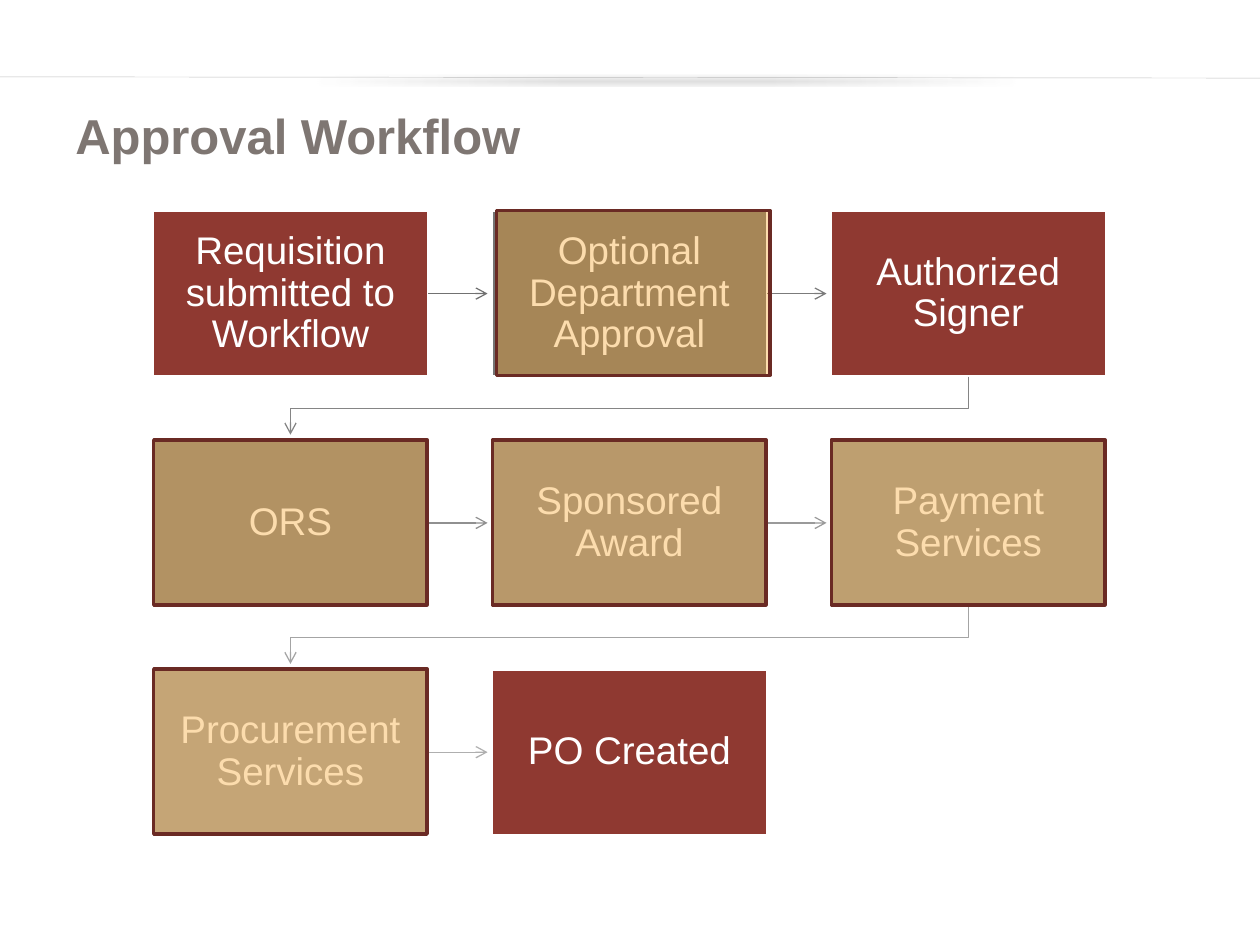
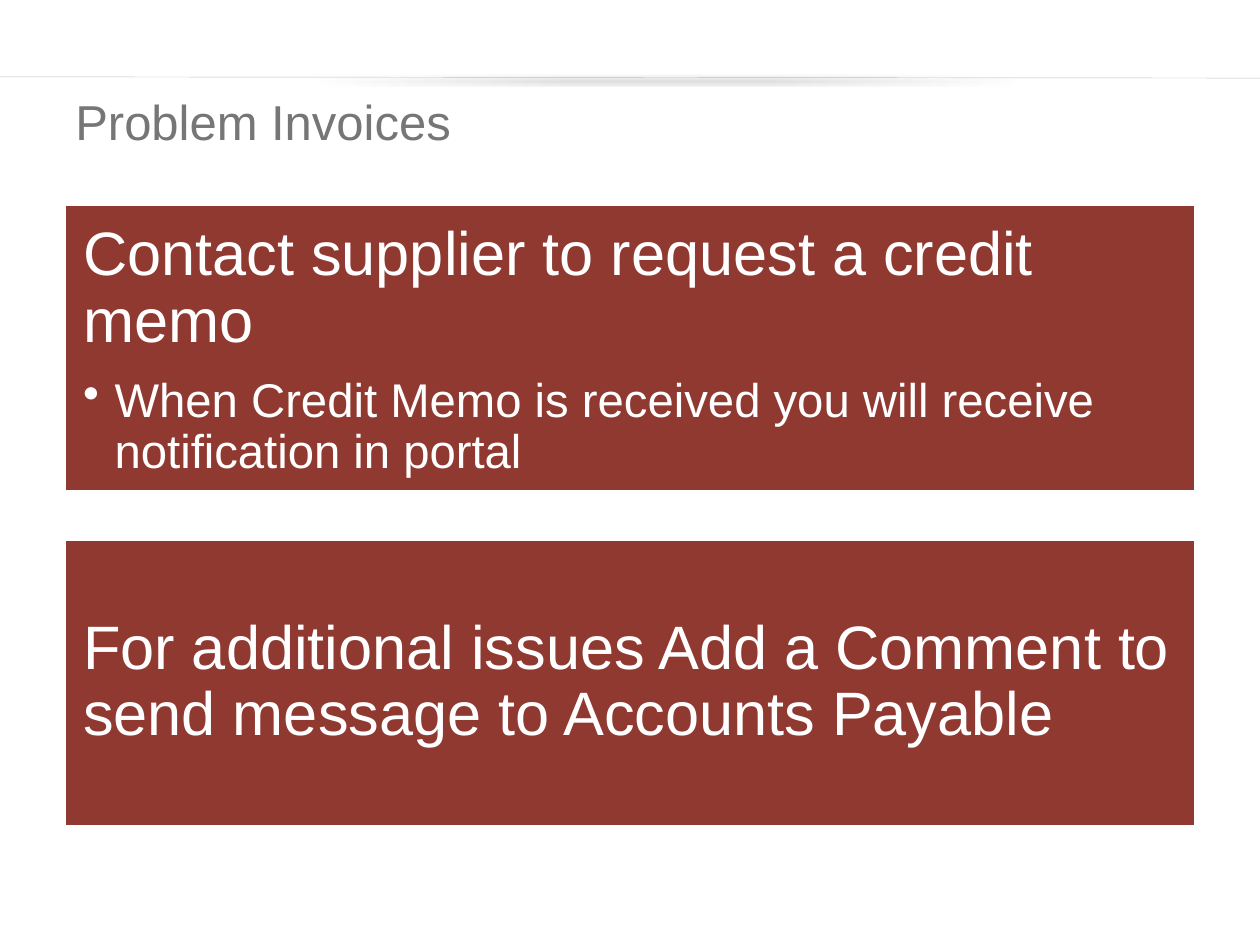
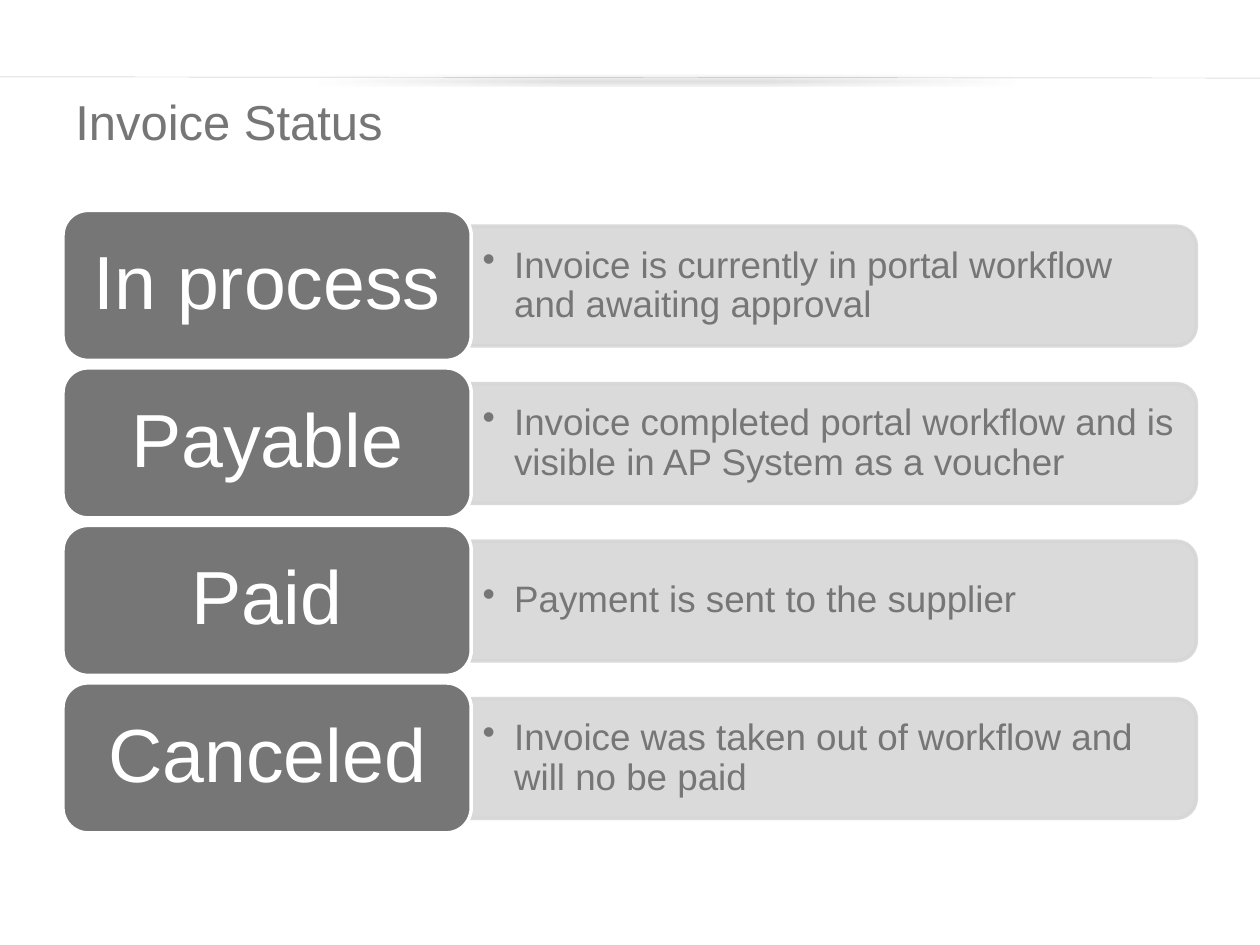
"""Build three slides on approval workflow, problem invoices and invoice status."""
from lxml.etree import SubElement
from pptx import Presentation
from pptx.dml.color import RGBColor
from pptx.enum.shapes import MSO_CONNECTOR, MSO_SHAPE
from pptx.enum.text import MSO_ANCHOR, PP_ALIGN
from pptx.oxml.ns import qn
from pptx.util import Inches, Pt

WHITE = RGBColor(0xFF, 0xFF, 0xFF)
RED = RGBColor(0x8F, 0x39, 0x31)
DARK = RGBColor(0x6A, 0x2A, 0x24)
GOLD = RGBColor(0xF8, 0xA4, 0x29)
TAUPE = RGBColor(0x7E, 0x76, 0x72)
GREY = RGBColor(0x76, 0x76, 0x76)
PALE = RGBColor(0xD6, 0xD6, 0xD6)
RULE = RGBColor(0xBF, 0xBF, 0xBF)


def box(slide, kind, spot, fill, edge, alpha=(100, 100)):
    shape = slide.shapes.add_shape(kind, *map(Inches, spot))
    shape.shadow.inherit = False
    shape.fill.solid()
    shape.fill.fore_color.rgb = fill
    shape.line.color.rgb = edge
    shape.line.width = Pt(2)
    props = shape._element.spPr
    for part, pct in zip((props, props.find(qn("a:ln"))), alpha):
        if pct < 100:
            tint = part.find(qn("a:solidFill")).find(qn("a:srgbClr"))
            SubElement(tint, qn("a:alpha"), val=str(pct * 1000))
    return shape


def write(shape, text, size, color, pad, align=PP_ALIGN.LEFT, bullet=False):
    frame = shape.text_frame
    frame.word_wrap = True
    frame.vertical_anchor = MSO_ANCHOR.MIDDLE
    frame.margin_left = frame.margin_right = Inches(pad[0])
    frame.margin_top = frame.margin_bottom = Inches(pad[1])
    para = frame.add_paragraph() if frame.text else frame.paragraphs[0]
    para.text = text
    para.alignment = align
    para.line_spacing = 0.9
    if bullet:
        props = para._p.get_or_add_pPr()
        props.set("marL", str(Inches(0.25)))
        props.set("indent", str(-Inches(0.25)))
        SubElement(props, qn("a:buChar"), char="•")
    para.font.name = "Arial"
    para.font.size = Pt(size)
    para.font.color.rgb = color
    return para


deck = Presentation()
deck.slide_width, deck.slide_height = Inches(10), Inches(7.5)

slides = []
for title, top, color, bold in [
    ("Approval Workflow", 0.85, TAUPE, True),
    ("Problem Invoices", 0.74, GREY, False),
    ("Invoice Status", 0.74, GREY, False),
]:
    slide = deck.slides.add_slide(deck.slide_layouts[6])
    rule = slide.shapes.add_connector(
        MSO_CONNECTOR.STRAIGHT, 0, Inches(0.61), Inches(10), Inches(0.62))
    rule.line.color.rgb = RULE
    rule.line.width = Pt(0.25)
    glow = SubElement(
        SubElement(rule._element.spPr, qn("a:effectLst")), qn("a:outerShdw"),
        blurRad=str(Pt(3.1)), dist=str(Pt(1.6)), dir="5400000", rotWithShape="0")
    SubElement(SubElement(glow, qn("a:srgbClr"), val="000000"), qn("a:alpha"), val="38000")
    head = slide.shapes.add_textbox(Inches(0.5), Inches(top), Inches(9), Inches(0.44))
    para = write(head, title, 28, color, (0.1, 0.05))
    para.line_spacing = 1.0
    para.font.bold = bold
    slides.append(slide)
flow, problem, status = slides

STEPS = [
    ("Requisition submitted to Workflow", None),
    ("Optional Department Approval", 0.04),
    ("Authorized Signer", None),
    ("ORS", 0.01),
    ("Sponsored Award", 0.01),
    ("Payment Services", 0.01),
    ("Procurement Services", 0.01),
    ("PO Created", None),
]
WIDE, HIGH = 2.19, 1.32
spots = [(1.21 + 2.69 * (i % 3), 1.67 + 1.82 * (i // 3)) for i in range(len(STEPS))]
cards = []
for i, ((text, nudge), (x, y)) in enumerate(zip(STEPS, spots)):
    fill = RED if nudge is None else RGBColor(*[106 + 10 * i] * 3)
    card = box(flow, MSO_SHAPE.RECTANGLE, (x, y, WIDE, HIGH), fill, WHITE)
    write(card, text, 22, WHITE, (0.17, 0.17), PP_ALIGN.CENTER)
    cards.append(card)

for i, (x, y) in enumerate(spots[:-1]):
    left, top = spots[i + 1]
    if top == y:
        mid = Inches(y + HIGH / 2)
        arrow = flow.shapes.add_connector(
            MSO_CONNECTOR.STRAIGHT, Inches(x + WIDE), mid, Inches(left - 0.03), mid)
        arrow.begin_connect(cards[i], 3)
    else:
        start, end = x + WIDE / 2, left + WIDE / 2
        bend = y + HIGH + 0.25
        path = flow.shapes.build_freeform(Inches(start), Inches(y + HIGH))
        path.add_line_segments(
            [(Inches(a), Inches(b)) for a, b in
             [(start, bend), (end, bend), (end, top - 0.04)]], close=False)
        arrow = path.convert_to_shape()
        arrow.fill.background()
    arrow.line.color.rgb = RGBColor(*[113 + i * 31 // 3] * 3)
    arrow.line.width = Pt(0.75)
    SubElement(arrow.line._get_or_add_ln(), qn("a:tailEnd"), type="arrow")
    SubElement(arrow._element.spPr, qn("a:effectLst"))

for (text, nudge), (x, y) in zip(STEPS, spots):
    if nudge is not None:
        box(flow, MSO_SHAPE.RECTANGLE, (x + nudge, y, 2.17, 1.31), GOLD, DARK, (38, 100))

for top, text, note in [
    (1.62, "Contact supplier to request a credit memo",
     "When Credit Memo is received you will receive notification in portal"),
    (4.28, "For additional issues Add a Comment to send message to Accounts Payable", None),
]:
    panel = box(problem, MSO_SHAPE.RECTANGLE, (0.51, top, 8.98, 2.28), RED, WHITE)
    para = write(panel, text, 35, WHITE, (0.15, 0.15))
    if note:
        para.space_after = Pt(12)
        write(panel, note, 27, WHITE, (0.15, 0.15), bullet=True)
        panel.text_frame.vertical_anchor = MSO_ANCHOR.TOP

for i, (name, text) in enumerate([
    ("In process", "Invoice is currently in portal workflow and awaiting approval"),
    ("Payable", "Invoice completed portal workflow and is visible in AP System as a voucher"),
    ("Paid", "Payment is sent to the supplier"),
    ("Canceled", "Invoice was taken out of workflow and will no be paid"),
]):
    top = 1.67 + 1.25 * i
    bar = box(status, MSO_SHAPE.ROUND_2_SAME_RECTANGLE,
              (6.14, top - 2.28, 0.95, 5.76), PALE, PALE, (90, 90))
    bar.rotation = 90
    note = status.shapes.add_textbox(
        Inches(3.74), Inches(top + 0.17), Inches(5.71), Inches(0.86))
    write(note, text, 21, GREY, (0.09, 0.04), bullet=True)
    label = box(status, MSO_SHAPE.ROUNDED_RECTANGLE, (0.5, top, 3.24, 1.19), GREY, WHITE)
    write(label, name, 43, WHITE, (0.18, 0.09), PP_ALIGN.CENTER)

deck.save("out.pptx")
